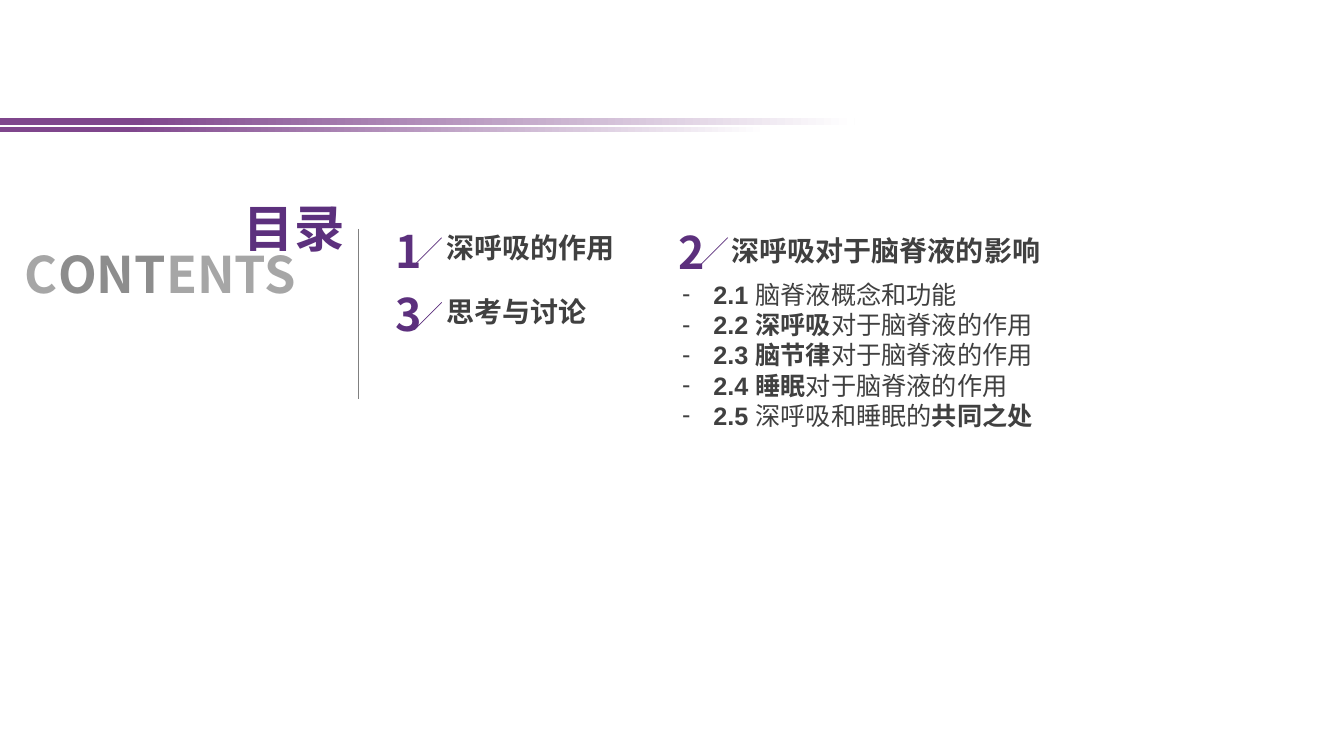
import pptx
import pptx.dml.color
import pptx.enum.shapes
import pptx.enum.text
import pptx.oxml.ns
import pptx.util
from lxml import etree

Cm = pptx.util.Cm
RGBColor = pptx.dml.color.RGBColor
MSO_AUTO_SIZE = pptx.enum.text.MSO_AUTO_SIZE
PP_ALIGN = pptx.enum.text.PP_ALIGN
qn = pptx.oxml.ns.qn

PURPLE = RGBColor(0x5C, 0x30, 0x7D)
BAR_PURPLE = RGBColor(0x7F, 0x46, 0x8C)
WHITE = RGBColor(0xFF, 0xFF, 0xFF)
TEXT_GREY = RGBColor(0x40, 0x40, 0x40)
RULE_GREY = RGBColor(0x80, 0x80, 0x80)
LIGHT_GREY = RGBColor(0xA6, 0xA6, 0xA6)
MID_GREY = RGBColor(0x8D, 0x8D, 0x8D)

HEADING_FONT = "Noto Sans CJK SC"
BODY_FONT = "Arial"


class ContentsSlide:
    """Holds the style and the current slide."""

    def __init__(self, presentation):
        self.slide = presentation.slides.add_slide(presentation.slide_layouts[5])
        self.shapes = self.slide.shapes

    def bar(self, top, width, height):
        bar = self.shapes.add_shape(
            pptx.enum.shapes.MSO_SHAPE.RECTANGLE, 0, Cm(top), Cm(width), Cm(height))
        bar.shadow.inherit = False
        bar.line.fill.background()
        bar.fill.gradient()
        bar.fill.gradient_angle = 0
        for stop, position, color in zip(
                bar.fill.gradient_stops, (0.16, 1), (BAR_PURPLE, WHITE)):
            stop.position = position
            stop.color.rgb = color

    def line(self, start, end, color):
        line = self.shapes.add_connector(
            pptx.enum.shapes.MSO_CONNECTOR.STRAIGHT, *map(Cm, start + end))
        line.line.color.rgb = color
        line.line.width = pptx.util.Pt(0.5)
        etree.SubElement(line.element.spPr, qn("a:effectLst"))

    def style_run(self, run, font, size, color, bold=True):
        run.font.name = font
        run.font.size = pptx.util.Pt(size)
        run.font.bold = bold
        run.font.color.rgb = color
        east_asian = etree.Element(qn("a:ea"), typeface=HEADING_FONT)
        run.font._element.find(qn("a:latin")).addnext(east_asian)

    def frame(self, box, wrap=False):
        frame = box.text_frame
        frame.word_wrap = wrap
        frame.auto_size = MSO_AUTO_SIZE.SHAPE_TO_FIT_TEXT
        frame.vertical_anchor = pptx.enum.text.MSO_ANCHOR.TOP
        return frame

    def title(self, text, left, top, width, height):
        title = self.shapes.title
        title.left, title.top = Cm(left), Cm(top)
        title.width, title.height = Cm(width), Cm(height)
        frame = self.frame(title)
        frame.text = text
        frame.paragraphs[0].alignment = PP_ALIGN.LEFT
        self.style_run(frame.paragraphs[0].runs[0], HEADING_FONT, 36, PURPLE)

    def text(self, parts, place, font, size, align=PP_ALIGN.LEFT, wrap=False):
        """Writes one line of (text, colour) parts."""
        frame = self.frame(self.shapes.add_textbox(*map(Cm, place)), wrap)
        paragraph = frame.paragraphs[0]
        paragraph.alignment = align
        for words, color in parts:
            run = paragraph.add_run()
            run.text = words
            self.style_run(run, font, size, color)

    def entry(self, number, topic, number_at, topic_at, topic_width, slash_at):
        self.text([(number, PURPLE)], number_at + (1.04, 1.63),
                  HEADING_FONT, 32, PP_ALIGN.CENTER)
        self.text([(topic, TEXT_GREY)], topic_at + (topic_width, 1.12), BODY_FONT, 20)
        right, top = slash_at
        self.line(slash_at, (right - 0.69, top + 0.69), PURPLE)

    def dash_list(self, items, place):
        """Writes dashed items of (text, bold) parts."""
        frame = self.frame(self.shapes.add_textbox(*map(Cm, place)), wrap=True)
        for index, parts in enumerate(items):
            paragraph = frame.add_paragraph() if index else frame.paragraphs[0]
            properties = paragraph._p.get_or_add_pPr()
            properties.set("marL", str(Cm(0.79)))
            properties.set("indent", str(-Cm(0.79)))
            etree.SubElement(properties, qn("a:buFont"), typeface=BODY_FONT)
            etree.SubElement(properties, qn("a:buChar"), char="-")
            for words, bold in parts:
                run = paragraph.add_run()
                run.text = words
                self.style_run(run, BODY_FONT, 18, TEXT_GREY, bold)


def main():
    presentation = pptx.Presentation()
    presentation.slide_width = Cm(33.87)
    presentation.slide_height = Cm(19.05)
    contents = ContentsSlide(presentation)

    # Fading bars across the top
    contents.bar(2.97, 21.54, 0.18)
    contents.bar(3.2, 19.33, 0.13)

    # Heading and divider
    contents.text([("C", LIGHT_GREY), ("ONT", MID_GREY), ("ENTS", LIGHT_GREY)],
                  (0.38, 5.99, 8.69, 1.8), HEADING_FONT, 36, wrap=True)
    contents.title("目录", 5.89, 4.85, 3.07, 1.8)
    contents.line((9.04, 5.77), (9.04, 10.06), RULE_GREY)

    # Numbered entries
    contents.entry("1", "深呼吸的作用", (9.73, 5.51), (11, 5.69), 4.78, (11.13, 5.99))
    contents.entry("2", "深呼吸对于脑脊液的影响",
                   (16.84, 5.54), (18.19, 5.77), 8.36, (18.34, 5.99))
    contents.entry("3", "思考与讨论", (9.73, 7.11), (11, 7.29), 4.06, (11.13, 7.62))

    # Sections of the second entry
    contents.dash_list([
        [("2.1 ", True), ("脑脊液概念和功能", False)],
        [("2.2 深呼吸", True), ("对于脑脊液的作用", False)],
        [("2.3 脑节律", True), ("对于脑脊液的作用", False)],
        [("2.4 睡眠", True), ("对于脑脊液的作用", False)],
        [("2.5 ", True), ("深呼吸和睡眠的", False), ("共同之处", True)],
    ], (16.94, 6.91, 9.45, 5.74))

    presentation.save("out.pptx")


if __name__ == "__main__":
    main()
